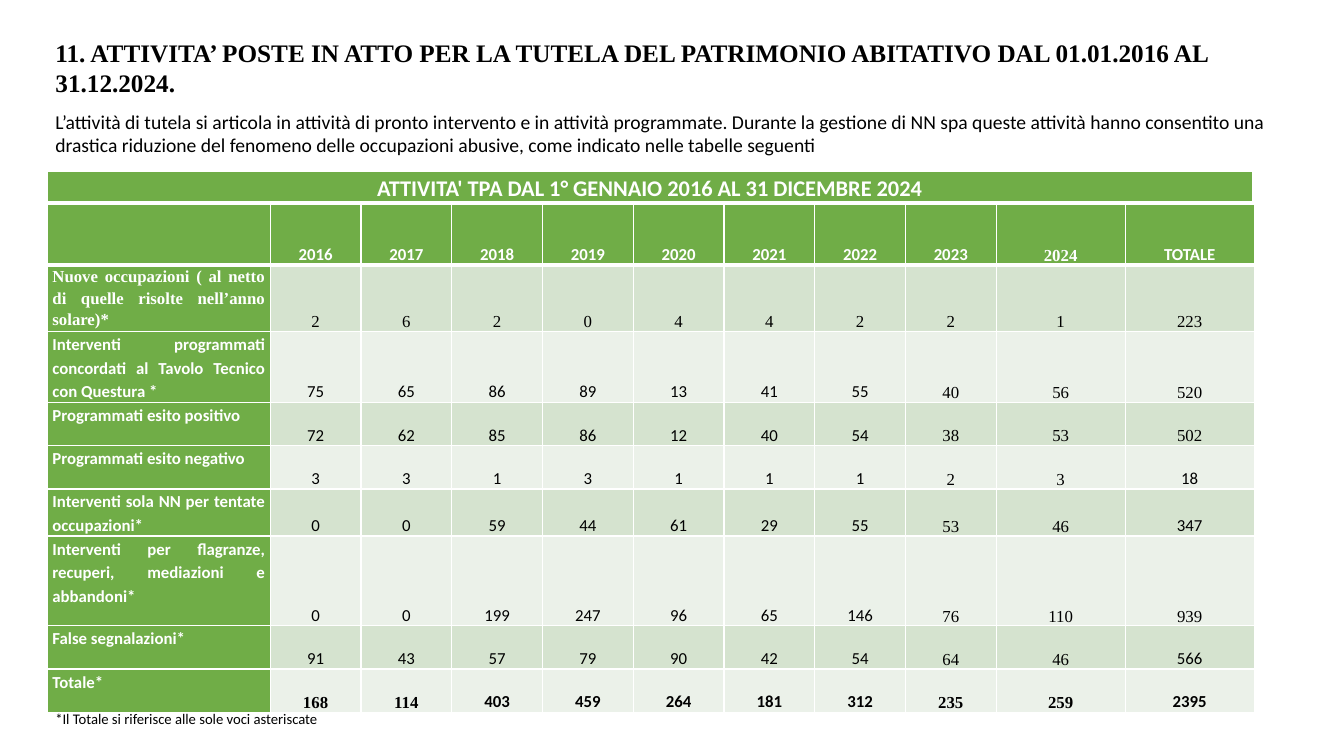
from lxml.etree import SubElement
from pptx import Presentation
from pptx.dml.color import RGBColor
from pptx.enum.text import MSO_ANCHOR, MSO_AUTO_SIZE, PP_ALIGN
from pptx.oxml.ns import qn
from pptx.util import Inches, Pt

SANS, SERIF = "Calibri", "Times New Roman"
GREEN, WHITE, BLACK = "70AD47", "FFFFFF", "000000"
BANDS = "D5E3CF", "EBF1E9"

TITLE = ("11. ATTIVITA’ POSTE IN ATTO PER LA TUTELA DEL PATRIMONIO ABITATIVO "
         "DAL 01.01.2016 AL 31.12.2024.")
INTRO = ("L’attività di tutela si articola in attività di pronto intervento e in "
         "attività programmate. Durante la gestione di NN spa queste attività hanno "
         "consentito una drastica riduzione del fenomeno delle occupazioni abusive, "
         "come indicato nelle tabelle seguenti")
BANNER = "ATTIVITA' TPA DAL 1° GENNAIO 2016 AL 31 DICEMBRE 2024"
NOTE = "*Il Totale si riferisce alle sole voci asteriscate"

HEADS = ["", *range(2016, 2025), "TOTALE"]
# Row height, label, values, columns set in the serif font
ROWS = [
    (0.66, "Nuove occupazioni ( al netto di quelle risolte nell’anno solare)*",
     [2, 6, 2, 0, 4, 4, 2, 2, 1, 223], range(11)),
    (0.66, "Interventi programmati concordati al Tavolo Tecnico con Questura *",
     [75, 65, 86, 89, 13, 41, 55, 40, 56, 520], (8, 9, 10)),
    (0.43, "Programmati esito positivo",
     [72, 62, 85, 86, 12, 40, 54, 38, 53, 502], (8, 9, 10)),
    (0.43, "Programmati esito negativo",
     [3, 3, 1, 3, 1, 1, 1, 2, 3, 18], (8, 9)),
    (0.44, "Interventi sola NN per tentate occupazioni*",
     [0, 0, 59, 44, 61, 29, 55, 53, 46, 347], (8, 9)),
    (0.89, "Interventi per flagranze, recuperi, mediazioni e abbandoni*",
     [0, 0, 199, 247, 96, 65, 146, 76, 110, 939], (8, 9, 10)),
    (0.43, "False segnalazioni*",
     [91, 43, 57, 79, 90, 42, 54, 64, 46, 566], (8, 9)),
    (0.43, "Totale*",
     [168, 114, 403, 459, 264, 181, 312, 235, 259, 2395], (1, 2, 8, 9)),
]
LEFT, WIDTH = 0.47, 11.95
COLS = [2.21] + [0.9] * 8 + [1.28] * 2


def paint(font, size, name=SANS, color=BLACK, bold=False):
    for key, value in {"size": Pt(size), "name": name, "bold": bold}.items():
        setattr(font, key, value)
    font.color.rgb = RGBColor.from_string(color)


def write(shape, box, text, size, wrap=True, **style):
    """Place a shape and give it one left-aligned paragraph."""
    for key, value in zip(("left", "top", "width", "height"), box):
        setattr(shape, key, Inches(value))
    frame = shape.text_frame
    frame.text = text
    formats = {"word_wrap": wrap, "auto_size": MSO_AUTO_SIZE.NONE,
               "vertical_anchor": MSO_ANCHOR.TOP}
    for key, value in formats.items():
        setattr(frame, key, value)
    para = frame.paragraphs[0]
    para.alignment = PP_ALIGN.LEFT
    paint(para.runs[0].font, size, **style)


def edge(cell, base):
    """Draw white cell borders, the lower one base points wide."""
    props = cell._tc.get_or_add_tcPr()
    for side, width in zip("LRTB", (1, 1, 1, base)):
        line = SubElement(props, qn(f"a:ln{side}"), w=str(Pt(width)))
        SubElement(SubElement(line, qn("a:solidFill")), qn("a:srgbClr"), val=WHITE)


def fill(cell, text, back, size=12, base=1, label=False, **style):
    edge(cell, base)
    cell.fill.solid()
    cell.fill.fore_color.rgb = RGBColor.from_string(back)
    formats = {"margin_left": Inches(0.05), "margin_right": Inches(0.05),
               "margin_top": 0, "margin_bottom": 0,
               "vertical_anchor": MSO_ANCHOR.TOP if label else MSO_ANCHOR.BOTTOM}
    for key, value in formats.items():
        setattr(cell, key, value)
    para = cell.text_frame.paragraphs[0]
    para.alignment = PP_ALIGN.JUSTIFY if label else PP_ALIGN.CENTER
    para.line_spacing = 1.15
    if text != "":
        run = para.add_run()
        run.text = str(text)
        paint(run.font, size, **style)


def grid(slide, top, cols, rows):
    """Add a plain table with the given column widths and row heights."""
    table = slide.shapes.add_table(
        len(rows), len(cols), Inches(LEFT), Inches(top),
        Inches(WIDTH), Inches(sum(rows))).table
    table.first_row = table.horz_banding = False
    for col, width in zip(table.columns, cols):
        col.width = Inches(width)
    for row, height in zip(table.rows, rows):
        row.height = Inches(height)
    return table


def main():
    deck = Presentation()
    deck.slide_width, deck.slide_height = Inches(13.33), Inches(7.5)
    slide = deck.slides.add_slide(deck.slide_layouts[5])
    write(slide.shapes.title, (0.45, 0.32, 12.25, 0.7), TITLE, 18,
          name=SERIF, bold=True)
    intro = slide.shapes.add_textbox(0, 0, 0, 0)
    write(intro, (0.45, 1.04, 12.25, 0.59), INTRO, 14)

    head = {"color": WHITE, "bold": True, "base": 3}
    banner = grid(slide, 1.7, [WIDTH], [0.29])
    fill(banner.cell(0, 0), BANNER, GREEN, size=16, **head)

    table = grid(slide, 2.03, COLS, [0.6] + [row[0] for row in ROWS])
    for col, text in enumerate(HEADS):
        fill(table.cell(0, col), text, GREEN,
             name=SERIF if text == 2024 else SANS, **head)
    for num, (_, label, values, serif) in enumerate(ROWS):
        for col, text in enumerate([label, *values]):
            first = col == 0
            fill(table.cell(num + 1, col), text,
                 GREEN if first else BANDS[num % 2], label=first,
                 name=SERIF if col in serif else SANS,
                 color=WHITE if first else BLACK,
                 bold=first or label == "Totale*")

    note = slide.shapes.add_textbox(0, 0, 0, 0)
    write(note, (0.45, 6.99, 2.9, 0.28), NOTE, 10.5, wrap=False)
    deck.save("out.pptx")


if __name__ == "__main__":
    main()
